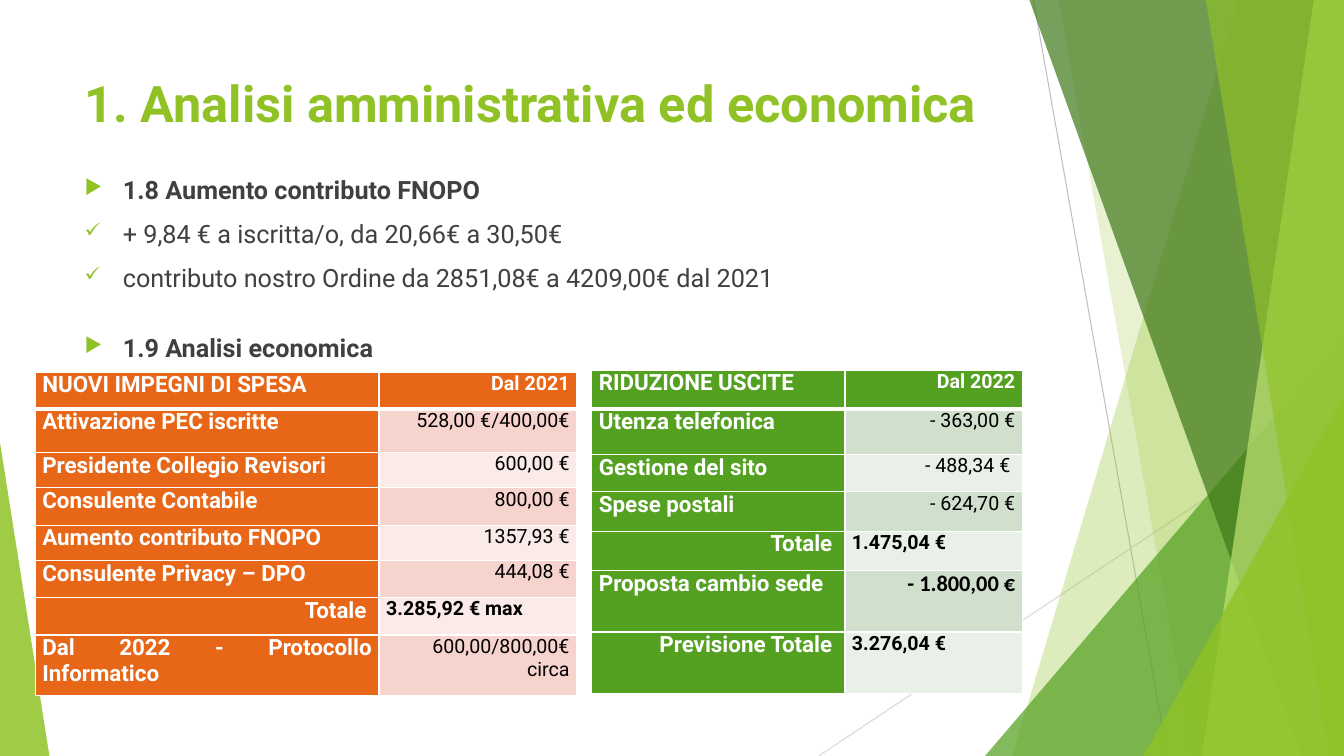
from lxml import etree
from pptx import Presentation
from pptx.dml.color import RGBColor
from pptx.enum.shapes import MSO_CONNECTOR, MSO_SHAPE
from pptx.enum.text import MSO_ANCHOR, PP_ALIGN
from pptx.oxml.ns import qn
from pptx.util import Inches, Pt

LINE = MSO_CONNECTOR.STRAIGHT
TRIANGLE = MSO_SHAPE.ISOSCELES_TRIANGLE
TOP = MSO_ANCHOR.TOP
RIGHT, JUSTIFY = PP_ALIGN.RIGHT, PP_ALIGN.JUSTIFY

SLIDE_W, SLIDE_H = 13.33, 7.5
FONT = "Roboto"
COLORS = {
    "lime": "90C226", "green": "54A021", "forest": "3F7819", "pale": "C0E474",
    "orange": "E76618", "text": "404040", "white": "FFFFFF", "black": "000000",
    "gray": "BFBFBF", "light_gray": "D9D9D9",
    "pink": "F6D3CC", "light_pink": "FAEAE8",
    "sage": "D1DFCD", "light_sage": "E9F0E8",
}

TITLE = "1. Analisi amministrativa ed economica"
ARROW, CHECK = "▶", "✓"
OUTLINES = [
    ((0.74, 1.68, 9.4, 1.44), [
        (ARROW, "1.8 Aumento contributo FNOPO"),
        (CHECK, "+ 9,84 € a iscritta/o, da 20,66€ a 30,50€"),
        (CHECK, "contributo nostro Ordine da 2851,08€ a 4209,00€ dal 2021"),
    ]),
    ((0.74, 3.25, 9.4, 0.5), [(ARROW, "1.9 Analisi economica")]),
]

BUDGETS = [
    {
        "at": (0.35, 3.69), "widths": (3.41, 1.96),
        "label_fill": "orange", "bands": ("pink", "light_pink"),
        "rows": [
            ("header", 0.37, "NUOVI IMPEGNI DI SPESA", "Dal 2021"),
            ("item", 0.43, "Attivazione PEC iscritte", "528,00 €/400,00€"),
            ("item", 0.35, "Presidente Collegio Revisori", "600,00 €"),
            ("item", 0.37, "Consulente Contabile", "800,00 €"),
            ("item", 0.35, "Aumento contributo FNOPO", "1357,93 €"),
            ("item", 0.37, "Consulente Privacy – DPO", "444,08 €"),
            ("total", 0.37, "Totale ", "3.285,92 € max"),
            ("item", 0.6, "Dal 2022 - Protocollo Informatico", "600,00/800,00€ circa"),
        ],
    },
    {
        "at": (5.87, 3.67), "widths": (2.51, 1.76),
        "label_fill": "green", "bands": ("sage", "light_sage"),
        "rows": [
            ("header", 0.39, "RIDUZIONE USCITE", "Dal 2022"),
            ("item", 0.45, "Utenza telefonica", "- 363,00 €"),
            ("item", 0.37, "Gestione del sito", "- 488,34 € "),
            ("item", 0.39, "Spese postali", "- 624,70 €"),
            ("total", 0.39, "Totale ", "1.475,04 €"),
            ("proposal", 0.61, "Proposta cambio sede", "- 1.800,00 €"),
            ("total", 0.61, "Previsione Totale ", "3.276,04 €"),
        ],
    },
]

RAYS = [
    ((10.25, 0), (11.58, 7.5), "gray"),
    ((13.33, 4.03), (8.12, 7.5), "light_gray"),
]
FACETS = [
    ("band", (12.28, 10.04), "lime", 30),
    ("band", (10.5, 11.83), "lime", 20),
    ("triangle", (9.77, 3.33, 3.56, 4.17, 1), "green", 72),
    ("band", (10.21, 12.91), "forest", 70),
    ("band", (13.03, 11.92), "pale", 70),
    ("band", (11.96, 13.18), "lime", 65),
    ("triangle", (11.34, 3.93, 1.99, 3.57, 1), "lime", 80),
    ("triangle", (0, 4.39, 0.49, 3.11, 0), "lime", 85),
]


def rgb(name):
    return RGBColor.from_string(COLORS[name])


def style_font(paragraph, size, color, bold, family=FONT):
    font = paragraph.font
    font.size, font.bold, font.name = Pt(size), bold, family
    font.color.rgb = rgb(color)


def add_ray(slide, start, end, color):
    ray = slide.shapes.add_connector(LINE, *map(Inches, start + end))
    ray.line.color.rgb = rgb(color)
    ray.line.width = Pt(0.75)
    etree.SubElement(ray._element.spPr, qn("a:effectLst"))


def add_facet(slide, kind, geometry, color, opacity):
    if kind == "band":
        top_x, bottom_x = geometry
        corners = [(SLIDE_W, 0), (SLIDE_W, SLIDE_H), (bottom_x, SLIDE_H)]
        outline = slide.shapes.build_freeform(Inches(top_x), 0)
        outline.add_line_segments([(Inches(x), Inches(y)) for x, y in corners])
        facet = outline.convert_to_shape()
    else:
        *box, apex = geometry
        facet = slide.shapes.add_shape(TRIANGLE, *map(Inches, box))
        facet.adjustments[0] = apex
    facet.shadow.inherit = False
    facet.line.fill.background()
    facet.fill.solid()
    facet.fill.fore_color.rgb = rgb(color)
    tint = facet._element.spPr.find(qn("a:solidFill"))[0]
    etree.SubElement(tint, qn("a:alpha"), val=str(opacity * 1000))


def add_text_frame(slide, box):
    frame = slide.shapes.add_textbox(*map(Inches, box)).text_frame
    frame.word_wrap = True
    frame.vertical_anchor = TOP
    return frame


def add_bullet(paragraph, mark):
    props = paragraph._p.get_or_add_pPr()
    props.set("marL", str(Inches(0.38)))
    props.set("indent", str(-Inches(0.38)))
    tint = etree.SubElement(props, qn("a:buClr"))
    etree.SubElement(tint, qn("a:srgbClr"), val=COLORS["lime"])
    etree.SubElement(props, qn("a:buSzPct"), val="80000")
    etree.SubElement(props, qn("a:buChar"), char=mark)


def add_outline(slide, box, points):
    frame = add_text_frame(slide, box)
    for index, (mark, text) in enumerate(points):
        point = frame.add_paragraph() if index else frame.paragraphs[0]
        point.text = text
        if index:
            point.space_before = Pt(10)
        add_bullet(point, mark)
        style_font(point, 18, "text", mark == ARROW)


def set_borders(cell, row):
    widths = {"L": 1, "R": 1, "T": 3 if row == 1 else 1, "B": 3 if row == 0 else 1}
    props = cell._tc.get_or_add_tcPr()
    for position, (side, width) in enumerate(widths.items()):
        border = etree.Element(qn(f"a:ln{side}"), w=str(Pt(width)))
        paint = etree.SubElement(border, qn("a:solidFill"))
        etree.SubElement(paint, qn("a:srgbClr"), val=COLORS["white"])
        props.insert(position, border)


def fill_cell(cell, row, text, fill, align, font):
    cell.margin_left = cell.margin_right = Inches(0.07)
    cell.margin_top = cell.margin_bottom = 0
    cell.vertical_anchor = TOP
    cell.fill.solid()
    cell.fill.fore_color.rgb = rgb(fill)
    set_borders(cell, row)
    entry = cell.text_frame.paragraphs[0]
    entry.text = text
    entry.alignment = align
    style_font(entry, *font)


def add_budget(slide, budget):
    rows, widths, accent = budget["rows"], budget["widths"], budget["label_fill"]
    size = (sum(widths), sum(row[1] for row in rows))
    box = map(Inches, budget["at"] + size)
    table = slide.shapes.add_table(len(rows), len(widths), *box).table
    for column, width in zip(table.columns, widths):
        column.width = Inches(width)
    for r, (kind, height, label, amount) in enumerate(rows):
        table.rows[r].height = Inches(height)
        header, total = kind == "header", kind == "total"
        fill = accent if header else budget["bands"][(r - 1) % 2]
        font = (14, "white" if header else "black", kind != "item")
        if kind == "proposal":
            font = (16, "black", True, "Calibri")
        fill_cell(table.cell(r, 0), r, label, accent,
                  RIGHT if total else JUSTIFY, (16, "white", True))
        fill_cell(table.cell(r, 1), r, amount, fill,
                  JUSTIFY if total else RIGHT, font)


def main():
    deck = Presentation()
    deck.slide_width, deck.slide_height = Inches(SLIDE_W), Inches(SLIDE_H)
    slide = deck.slides.add_slide(deck.slide_layouts[6])
    for ray in RAYS:
        add_ray(slide, *ray)
    for facet in FACETS:
        add_facet(slide, *facet)
    heading = add_text_frame(slide, (0.74, 0.67, 9.4, 1.44)).paragraphs[0]
    heading.text = TITLE
    style_font(heading, 36, "lime", True)
    for outline in OUTLINES:
        add_outline(slide, *outline)
    for budget in BUDGETS:
        add_budget(slide, budget)
    deck.save("out.pptx")


if __name__ == "__main__":
    main()
